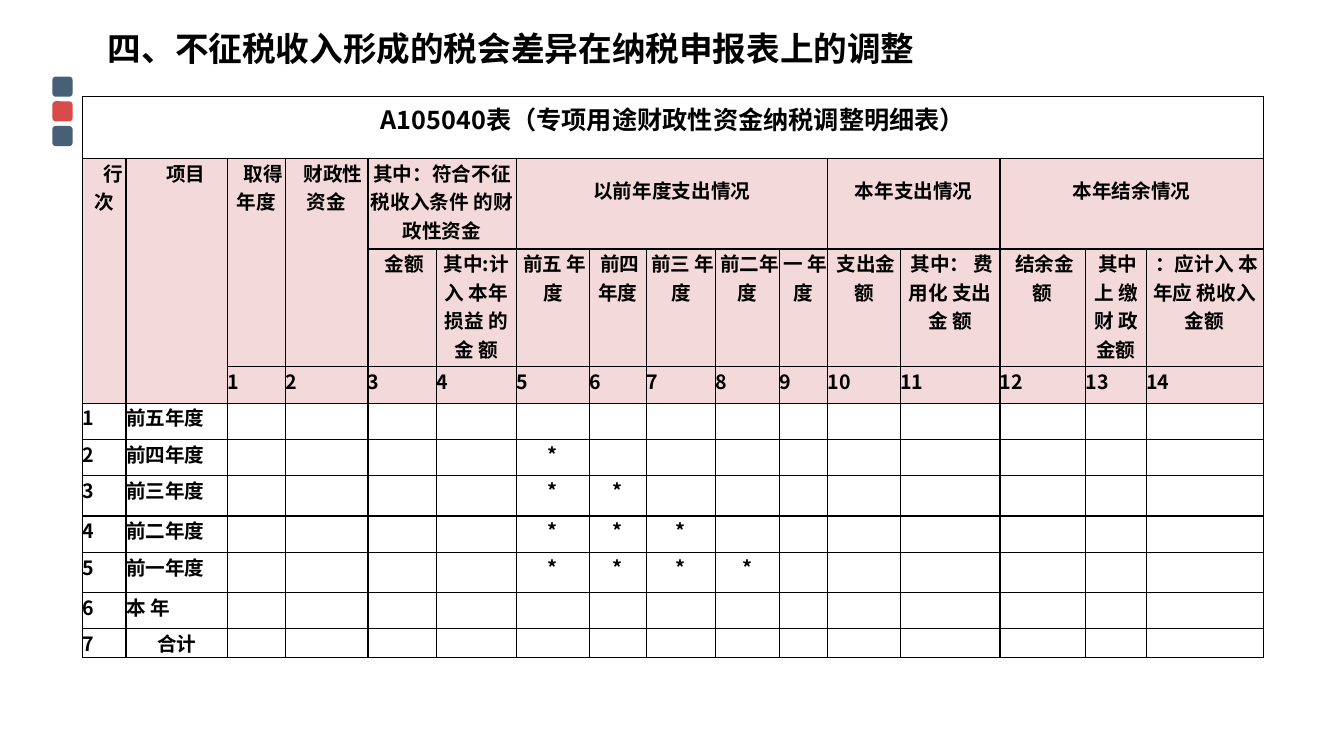
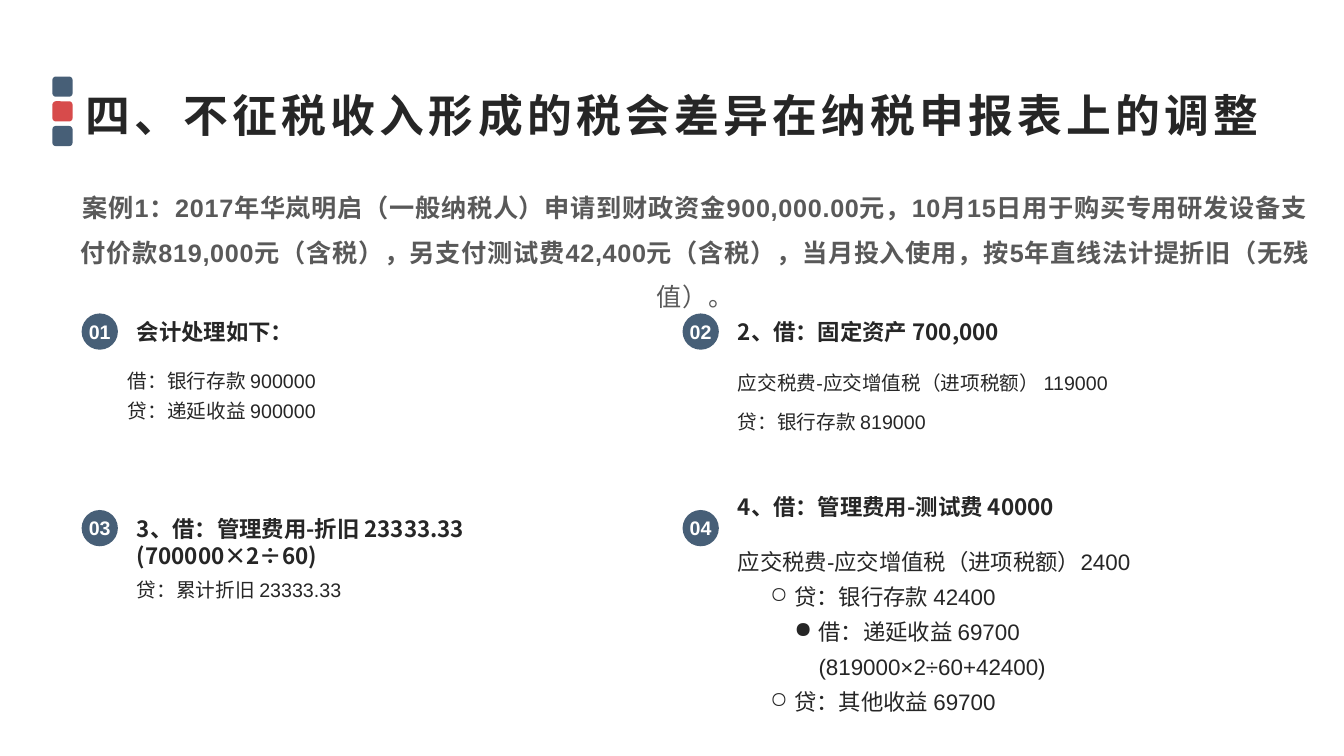
from dataclasses import dataclass

from pptx import Presentation
from pptx.dml.color import RGBColor
from pptx.enum.shapes import MSO_SHAPE
from pptx.enum.text import MSO_ANCHOR, MSO_AUTO_SIZE, PP_ALIGN
from pptx.oxml import parse_xml
from pptx.oxml.ns import nsdecls, qn
from pptx.util import Inches, Pt


@dataclass(frozen=True)
class Theme:
    navy: str = "475F77"
    red: str = "D74B4B"
    pink: str = "F3D9D9"
    black: str = "000000"
    ink: str = "262626"
    gray: str = "595959"
    white: str = "FFFFFF"
    latin: str = "Arial"
    cjk: str = "Noto Sans CJK SC"
    title_font: str = "Roboto"
    small: int = 14
    heading: int = 16
    lead: int = 18
    form_title: int = 24
    case_title: int = 32


THEME = Theme()

TITLE = "四、不征税收入形成的税会差异在纳税申报表上的调整"
FORM_NAME = "A105040表（专项用途财政性资金纳税调整明细表）"
COLUMN_WIDTHS = [0.43, 1.01, 0.57, 0.82, 0.68, 0.79, 0.73, 0.56,
                 0.69, 0.63, 0.48, 0.72, 0.99, 0.85, 0.6, 1.16]
ROW_HEIGHTS = [0.61, 0.9, 1.17, 0.36, 0.36, 0.36, 0.4, 0.36, 0.4, 0.36, 0.27]
HEADER_ROWS = range(1, 4)
GROUP_HEADERS = [
    (0, 3, 1, "行 次", 0.18, 0),
    (1, 3, 1, "项目", 0.18, 0),
    (2, 2, 1, "取得 年度", 0.13, 0),
    (3, 2, 1, "财政性 资金", 0.13, 0),
    (4, 1, 2, "其中：符合不征税收入条件 的财政性资金", 0, 0),
    (6, 1, 5, "以前年度支出情况", 0, 0.17),
    (11, 1, 2, "本年支出情况", 0, 0.17),
    (13, 1, 3, "本年结余情况", 0, 0.17),
]
SUB_HEADERS = [
    ("金额", 0.04), ("其中:计入 本年 损益 的金 额", 0), ("前五 年度", 0.04),
    ("前四 年度", 0.04), ("前三 年度", 0.04), ("前二年度", 0.04),
    ("一 年度", 0.04), ("支出金 额", 0.04), ("其中： 费用化 支出金 额", 0.04),
    ("结余金 额", 0.04), ("其中 上 缴财 政 金额", 0.04),
    ("：应计入 本年应 税收入 金额", 0.04),
]
YEAR_ROWS = [("前五年度", 0), ("前四年度", 1), ("前三年度", 2), ("前二年度", 3),
             ("前一年度", 4), ("本 年", 0), ("合计", 0)]
FIRST_YEAR_ROW = 4
FIRST_STAR_COLUMN = 6

CASE_TEXT = ("案例1：2017年华岚明启（一般纳税人）申请到财政资金900,000.00元，"
             "10月15日用于购买专用研发设备支付价款819,000元（含税），"
             "另支付测试费42,400元（含税），当月投入使用，按5年直线法计提折旧（无残")
CASE_ENDING = "值）。"

BADGE_LEFTS = [0.81, 6.77]
BADGE_TOPS = [3.11, 5.06]
BADGE_SIZE = 0.36
ENTRIES = [
    dict(heading="会计处理如下：", heading_top=3.11, body_top=3.54, body_shift=0.36,
         spacing=1.3, before=0, size=THEME.small,
         lines=[("借：银行存款 900000", 0, ""), ("贷：递延收益 900000", 0, "")]),
    dict(heading="2、借：固定资产 700,000", heading_top=3.11, body_top=3.54, body_shift=0.45,
         spacing=1.4, before=4, size=THEME.small,
         lines=[("应交税费-应交增值税（进项税额） 119000", 0, ""),
                ("贷：银行存款 819000", 0, "")]),
    dict(heading="3、借：管理费用-折旧 23333.33\v(700000×2÷60)", heading_top=5.06,
         body_top=5.59, body_shift=0.45, spacing=1.4, before=0, size=THEME.small,
         lines=[("贷：累计折旧 23333.33", 0, "")]),
    dict(heading="4、借：管理费用-测试费 40000", heading_top=4.84, body_top=5.31,
         body_shift=0.45, spacing=1.3, before=0, size=THEME.heading,
         lines=[("应交税费-应交增值税（进项税额）2400", 0, ""),
                ("贷：银行存款 42400", 0.56, "○"),
                ("借：递延收益 69700\v(819000×2÷60+42400)", 0.8, "●"),
                ("贷：其他收益 69700", 0.56, "○")]),
]


def style(paragraph, size, color, font=THEME.latin, bold=False, align=PP_ALIGN.LEFT,
          left=0, indent=0, bullet="", tracking=0):
    properties = paragraph._p.get_or_add_pPr()
    properties.set("marL", str(Inches(left)))
    properties.set("indent", str(Inches(indent)))
    if bullet:
        properties.append(parse_xml(f'<a:buChar {nsdecls("a")} char="{bullet}"/>'))
    paragraph.alignment = align
    paragraph.font.size = Pt(size)
    paragraph.font.bold = bold
    paragraph.font.color.rgb = RGBColor.from_string(color)
    paragraph.font.name = font
    defaults = properties.find(qn("a:defRPr"))
    if tracking:
        defaults.set("spc", str(int(tracking * 100)))
    defaults.find(qn("a:latin")).addnext(
        parse_xml(f'<a:ea {nsdecls("a")} typeface="{THEME.cjk}"/>'))


def set_frame(frame, horizontal=0.1, vertical=0.05, anchor=MSO_ANCHOR.TOP):
    frame.word_wrap = True
    frame.auto_size = MSO_AUTO_SIZE.NONE
    frame.vertical_anchor = anchor
    frame.margin_left = frame.margin_right = Inches(horizontal)
    frame.margin_top = frame.margin_bottom = Inches(vertical)


def add_text_box(slide, left, top, width, height, **margins):
    frame = slide.shapes.add_textbox(*map(Inches, (left, top, width, height))).text_frame
    set_frame(frame, **margins)
    return frame


def add_filled_shape(slide, kind, left, top, size, color):
    shape = slide.shapes.add_shape(kind, *map(Inches, (left, top, size, size)))
    shape.shadow.inherit = False
    shape.fill.solid()
    shape.fill.fore_color.rgb = RGBColor.from_string(color)
    shape.line.fill.background()
    return shape


def add_marker_squares(layout, slide):
    for index, color in enumerate([THEME.navy, THEME.red, THEME.navy]):
        square = add_filled_shape(slide, MSO_SHAPE.ROUNDED_RECTANGLE,
                                  0.52, 0.76 + index * 0.245, 0.2, color)
        layout.shapes.element.append(square.element)


def set_title(slide, box, size, font, color, margins, **options):
    title = slide.shapes.title
    title.left, title.top, title.width, title.height = map(Inches, box)
    title.text_frame.text = TITLE
    set_frame(title.text_frame, *margins)
    style(title.text_frame.paragraphs[0], size, color, font, True, **options)


def write_cell(cell, text, align=PP_ALIGN.CENTER, indent=0, size=THEME.small):
    cell.text = text
    style(cell.text_frame.paragraphs[0], size, THEME.black, THEME.cjk, True,
          align, indent=indent)


def format_cells(frame):
    table = frame.table
    for row in range(len(ROW_HEIGHTS)):
        for column in range(len(COLUMN_WIDTHS)):
            cell = table.cell(row, column)
            cell.margin_left = cell.margin_right = cell.margin_top = cell.margin_bottom = 0
            if row in HEADER_ROWS:
                cell.fill.solid()
                cell.fill.fore_color.rgb = RGBColor.from_string(THEME.pink)
            else:
                cell.fill.background()
            write_cell(cell, "")
    for properties in frame.element.iter(qn("a:tcPr")):
        for index, side in enumerate("LRTB"):
            properties.insert(index, parse_xml(
                f'<a:ln{side} {nsdecls("a")} w="{Pt(1)}"><a:solidFill>'
                f'<a:srgbClr val="{THEME.black}"/></a:solidFill></a:ln{side}>'))


def add_form_table(slide):
    frame = slide.shapes.add_table(
        len(ROW_HEIGHTS), len(COLUMN_WIDTHS), Inches(0.82), Inches(0.96),
        Inches(sum(COLUMN_WIDTHS)), Inches(sum(ROW_HEIGHTS)))
    table = frame.table
    table.first_row = table.horz_banding = False
    for column, width in zip(table.columns, COLUMN_WIDTHS):
        column.width = Inches(width)
    for row, height in zip(table.rows, ROW_HEIGHTS):
        row.height = Inches(height)
    format_cells(frame)

    name_cell = table.cell(0, 0)
    name_cell.merge(table.cell(0, len(COLUMN_WIDTHS) - 1))
    name_cell.margin_top = Inches(0.03)
    write_cell(name_cell, FORM_NAME, size=THEME.lead)

    for column, rows, columns, text, indent, margin in GROUP_HEADERS:
        cell = table.cell(1, column)
        if rows * columns > 1:
            cell.merge(table.cell(rows, column + columns - 1))
        cell.margin_top = Inches(margin)
        write_cell(cell, text, indent=indent)
    for column, (text, indent) in enumerate(SUB_HEADERS, 4):
        write_cell(table.cell(2, column), text, indent=indent)
    for column in range(2, len(COLUMN_WIDTHS)):
        write_cell(table.cell(3, column), str(column - 1), PP_ALIGN.LEFT)

    for number, (label, stars) in enumerate(YEAR_ROWS, 1):
        row = FIRST_YEAR_ROW + number - 1
        is_total = number == len(YEAR_ROWS)
        write_cell(table.cell(row, 0), str(number), PP_ALIGN.LEFT)
        write_cell(table.cell(row, 1), label,
                   PP_ALIGN.CENTER if is_total else PP_ALIGN.LEFT)
        if is_total:
            for column in range(2):
                table.cell(row, column).vertical_anchor = MSO_ANCHOR.MIDDLE
        for star in range(stars):
            write_cell(table.cell(row, FIRST_STAR_COLUMN + star), "*")


def add_case(slide):
    frame = add_text_box(slide, 0.67, 1.73, 12.45, 1.41, horizontal=0.12, vertical=0.04)
    paragraph = frame.paragraphs[0]
    paragraph.add_run().text = CASE_TEXT
    ending = paragraph.add_run()
    ending.text = CASE_ENDING
    ending.font.bold = False
    style(paragraph, THEME.lead, THEME.gray, bold=True, align=PP_ALIGN.CENTER, tracking=0.5)
    paragraph.line_spacing = Pt(31.8)


def add_entry(slide, index, entry):
    row, column = divmod(index, len(BADGE_LEFTS))
    left, top = BADGE_LEFTS[column], BADGE_TOPS[row]
    badge = add_filled_shape(slide, MSO_SHAPE.OVAL, left, top, BADGE_SIZE, THEME.navy)
    badge.text_frame.text = f"{index + 1:02d}"
    set_frame(badge.text_frame, 0, 0, MSO_ANCHOR.MIDDLE)
    badge.text_frame.word_wrap = False
    style(badge.text_frame.paragraphs[0], THEME.small, THEME.white, bold=True,
          align=PP_ALIGN.CENTER)

    heading = add_text_box(slide, left + 0.45, entry["heading_top"], 5.36, 0.63)
    heading.text = entry["heading"]
    style(heading.paragraphs[0], THEME.heading, THEME.ink, THEME.cjk, True)

    body = add_text_box(slide, left + entry["body_shift"], entry["body_top"], 5.36,
                        0.4 * len(entry["lines"]) + 0.1)
    for position, (text, margin, bullet) in enumerate(entry["lines"]):
        paragraph = body.add_paragraph() if position else body.paragraphs[0]
        paragraph.text = text
        style(paragraph, entry["size"], THEME.ink, left=margin,
              indent=-0.24 if bullet else 0, bullet=bullet)
        paragraph.line_spacing = entry["spacing"]
        paragraph.space_before = Pt(entry["before"] if position else 0)


def main():
    presentation = Presentation()
    presentation.slide_width, presentation.slide_height = Inches(13.33), Inches(7.5)
    layout = presentation.slide_layouts.get_by_name("Title Only")

    form_slide = presentation.slides.add_slide(layout)
    add_marker_squares(layout, form_slide)
    set_title(form_slide, (0.97, 0.23, 9.4, 0.5), THEME.form_title, THEME.title_font,
              THEME.black, (0.1, 0.05))
    add_form_table(form_slide)

    case_slide = presentation.slides.add_slide(layout)
    set_title(case_slide, (0.67, 0.83, 12, 0.69), THEME.case_title, THEME.latin,
              THEME.ink, (0.08, 0.04), align=PP_ALIGN.CENTER, tracking=3)
    add_case(case_slide)
    for index, entry in enumerate(ENTRIES):
        add_entry(case_slide, index, entry)

    presentation.save("out.pptx")


if __name__ == "__main__":
    main()
